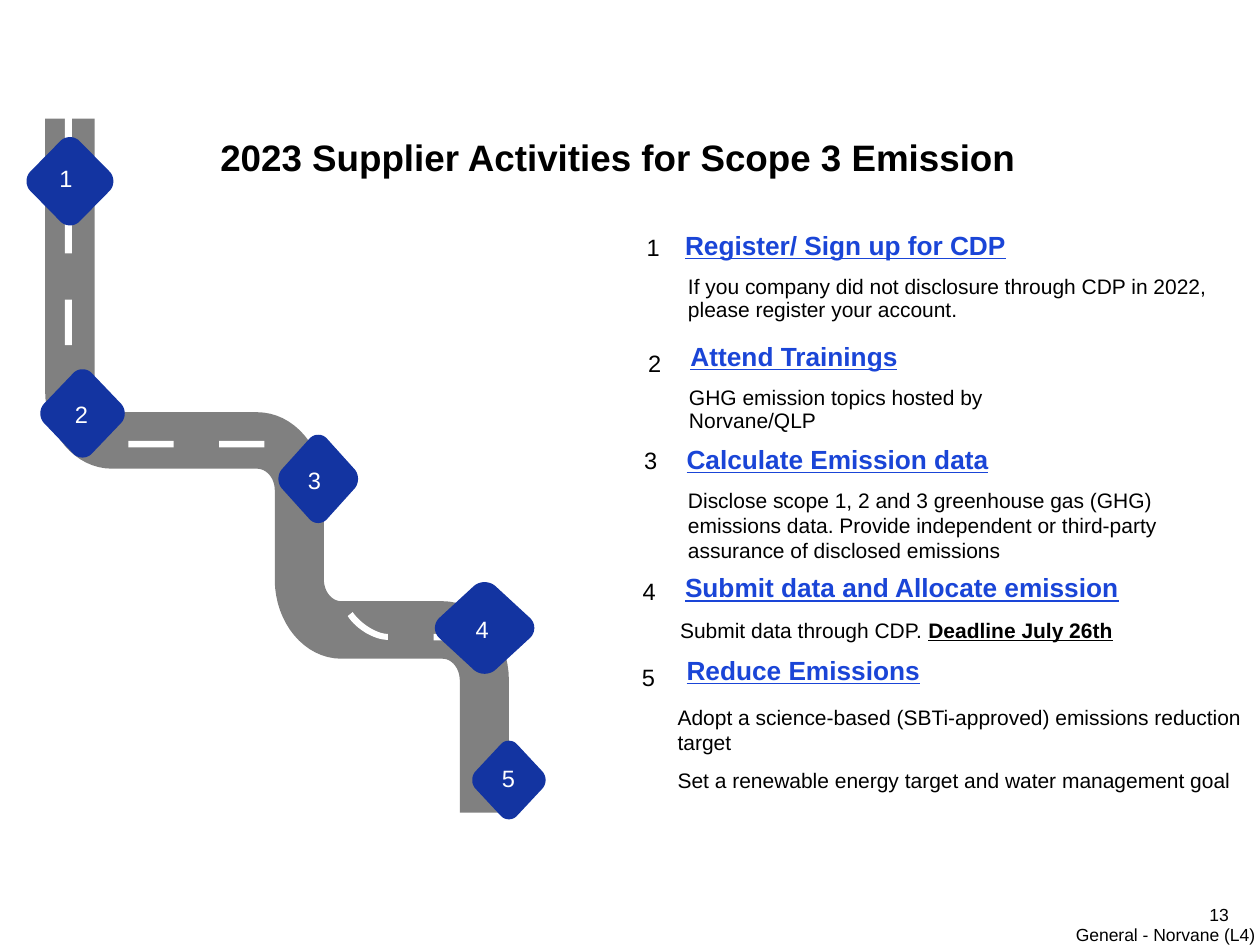
"""Build the supplier activities slide: a winding road beside five numbered steps."""
from dataclasses import dataclass

from pptx import Presentation
from pptx import util as u
from pptx.dml.color import RGBColor
from pptx.enum import text


@dataclass(frozen=True)
class Theme:
    """Colours, font and type sizes of the slide."""
    font: str = "Arial"
    ink: str = "000000"
    white: str = "FFFFFF"
    road: str = "808080"
    marker: str = "1334A1"
    link: str = "1A45D7"
    title: float = 21
    heading: float = 15
    number: float = 13.5
    body: float = 12
    footer: float = 10


@dataclass(frozen=True)
class Step:
    """One activity: its texts and, in centimetres, where its parts sit."""
    heading: str
    body: tuple
    label_at: tuple
    heading_box: tuple
    body_box: tuple
    marker_box: tuple
    marker_label_at: tuple
    leading: float = 0


T = Theme()
LABEL_SIZE = (0.94, 1.07)
TIGHT = (0.1, 0.05, 0.1, 0.05)
ROUNDNESS = 0.55

STEPS = [
    Step("Register/ Sign up for CDP",
         (("If you company did not disclosure through CDP in 2022, "
           "please register your account.",),),
         (12.7, 4.45), (13.56, 4.5, 7.04, 0.89), (13.77, 5.51, 10.9, 1.02),
         (0.51, 2.74, 1.8, 1.83), (0.86, 3.05), 13.1),
    Step("Attend Trainings",
         (("GHG emission topics hosted by Norvane/QLP",),),
         (12.73, 6.78), (13.67, 6.73, 4.72, 0.89), (13.79, 7.75, 8.13, 1.02),
         (0.79, 7.42, 1.75, 1.83), (1.17, 7.82), 13.1),
    Step("Calculate Emission data",
         (("Disclose scope 1, 2 and 3 greenhouse gas (GHG) emissions data. Provide "
           "independent or third-party assurance of disclosed emissions",),),
         (12.65, 8.74), (13.59, 8.81, 6.65, 0.89), (13.77, 9.78, 11.18, 2.26),
         (5.59, 8.74, 1.65, 1.83), (5.87, 9.14)),
    Step("Submit data and Allocate emission",
         (("Submit data through CDP. ", "Deadline July 26th"),),
         (12.62, 11.38), (13.56, 11.4, 9.47, 0.89), (13.61, 12.4, 10.41, 0.61),
         (8.74, 11.71, 2.06, 1.9), (9.25, 12.14)),
    Step("Reduce Emissions",
         (("Adopt a science-based (SBTi-approved) emissions reduction target",),
          ("Set a renewable energy target and water management goal",)),
         (12.6, 13.11), (13.59, 13.06, 5.26, 0.89), (13.56, 14.15, 11.73, 2.84),
         (9.5, 14.91, 1.52, 1.63), (9.78, 15.14)),
]

ROAD = [
    (10.26, 16.38), (9.27, 16.38), (9.27, 13.72), (9.27, 13.28, 8.92, 13.28),
    (6.88, 13.28), (5.54, 13.28, 5.54, 11.68), (5.54, 9.88), (5.54, 9.45, 5.18, 9.45),
    (2.26, 9.45), (0.91, 9.45, 0.91, 7.87), (0.91, 2.39), (1.91, 2.39),
    (1.91, 7.87), (1.91, 8.31, 2.26, 8.31), (5.18, 8.31), (6.53, 8.31, 6.53, 9.88),
    (6.53, 11.68), (6.53, 12.12, 6.88, 12.12), (8.92, 12.12), (10.26, 12.12, 10.26, 13.72),
]
BEND_DASH = [(7.82, 12.9), (7.32, 12.9, 7.01, 12.42), (7.11, 12.34), (7.42, 12.78, 7.82, 12.78)]


def bend(start, corner, end, n=16):
    """Return points along a rounded corner from start to end."""
    def at(t):
        pts = []
        for a, c, b in zip(start, corner, end):
            p, q = a + ROUNDNESS * (c - a), b + ROUNDNESS * (c - b)
            pts.append((1 - t) ** 3 * a + 3 * t * (1 - t) ** 2 * p
                       + 3 * t * t * (1 - t) * q + t ** 3 * b)
        return tuple(pts)
    return [at(i / n) for i in range(1, n + 1)]


def outline(steps):
    """Turn line ends (x, y) and bends (corner x, y, end x, y) into points."""
    pts = [steps[0]]
    for step in steps[1:]:
        pts += [step] if len(step) == 2 else bend(pts[-1], step[:2], step[2:])
    return pts


def rectangle(x, y, w, h):
    """Return the corners of a rectangle."""
    return [(x, y), (x + w, y), (x + w, y + h), (x, y + h)]


def diamond(x, y, w, h):
    """Return the points of a diamond with rounded tips that fills a box."""
    tip = [(-0.105, -0.445)] + bend((-0.105, -0.445), (0, -0.545), (0.105, -0.445))
    pts = []
    for _ in range(4):
        pts += tip
        tip = [(-b, a) for a, b in tip]
    return [(x + w * (0.5 + a), y + h * (0.5 + b)) for a, b in pts]


def add_outline(s, contours, color):
    """Add one filled freeform made of closed contours."""
    paths = [[(u.Cm(x), u.Cm(y)) for x, y in c] for c in contours]
    fb = s.shapes.build_freeform(*paths[0][0])
    for i, pts in enumerate(paths):
        if i:
            fb.move_to(*pts[0])
        fb.add_line_segments(pts[1:], close=True)
    sp = fb.convert_to_shape()
    sp.shadow.inherit = False
    sp.fill.solid()
    sp.fill.fore_color.rgb = RGBColor.from_string(color)
    sp.line.fill.background()


def style(r, size, color=T.ink, bold=False, underline=False):
    """Format one run."""
    r.font.name, r.font.size = T.font, u.Pt(size)
    r.font.bold, r.font.underline = bold, underline
    r.font.color.rgb = RGBColor.from_string(color)


def add_text(s, box, content, size, color=T.ink, align=text.PP_ALIGN.LEFT,
             anchor=text.MSO_ANCHOR.TOP, insets=(0, 0, 0, 0), **marks):
    """Add a text box holding one styled paragraph."""
    tf = s.shapes.add_textbox(*map(u.Cm, box)).text_frame
    tf.word_wrap, tf.vertical_anchor = True, anchor
    tf.margin_left, tf.margin_top, tf.margin_right, tf.margin_bottom = map(u.Cm, insets)
    p = tf.paragraphs[0]
    p.text, p.alignment = content, align
    for r in p.runs:
        style(r, size, color, **marks)
    return tf


def add_number(s, at, n, color):
    """Add a step number centred in its box."""
    add_text(s, at + LABEL_SIZE, str(n), T.number, color,
             text.PP_ALIGN.CENTER, text.MSO_ANCHOR.MIDDLE)


def add_body(s, step):
    """Add a step's description, with any second run emphasised."""
    tf = add_text(s, step.body_box, "", T.body, insets=TIGHT)
    for i, runs in enumerate(step.body):
        p = tf.add_paragraph() if i else tf.paragraphs[0]
        p.space_after = u.Pt(7.5)
        if step.leading:
            p.line_spacing = u.Pt(step.leading)
        for j, content in enumerate(runs):
            r = p.add_run()
            r.text = content
            style(r, T.body, bold=j > 0, underline=j > 0)


def set_title(s, content):
    """Place and format the title placeholder."""
    sp = s.shapes.title
    sp.left, sp.top, sp.width, sp.height = map(u.Cm, (4.11, 2.59, 16.69, 1.14))
    tf = sp.text_frame
    tf.text, tf.word_wrap, tf.auto_size = content, False, text.MSO_AUTO_SIZE.NONE
    tf.paragraphs[0].alignment = text.PP_ALIGN.CENTER
    style(tf.paragraphs[0].runs[0], T.title, bold=True)


def add_road(s):
    """Add the road and its lane dashes."""
    down = [rectangle(1.31, 2.34 + 1.85 * i, 0.14, 0.92) for i in range(3)]
    across = [rectangle(x, y, 0.91, 0.13) for x, y in ((2.59, 8.89), (4.42, 8.89), (8.74, 12.78))]
    add_outline(s, [outline(ROAD)], T.road)
    add_outline(s, down + across + [outline(BEND_DASH)], T.white)


def main():
    """Build and save the slide."""
    prs = Presentation()
    prs.slide_width, prs.slide_height = u.Cm(25.4), u.Cm(19.05)
    s = prs.slides.add_slide(prs.slide_layouts[5])
    set_title(s, "2023 Supplier Activities for Scope 3 Emission")
    add_road(s)
    for n, step in enumerate(STEPS, 1):
        add_outline(s, [diamond(*step.marker_box)], T.marker)
        add_number(s, step.marker_label_at, n, T.white)
        add_number(s, step.label_at, n, T.ink)
        add_text(s, step.heading_box, step.heading, T.heading, T.link,
                 anchor=text.MSO_ANCHOR.BOTTOM, insets=(0.25, 0.13, 0, 0.13),
                 bold=True, underline=True)
        add_body(s, step)
    add_text(s, (23.5, 18.19, 1.27, 0.51), "13", T.footer, align=text.PP_ALIGN.RIGHT,
             anchor=text.MSO_ANCHOR.MIDDLE)
    add_text(s, (21.1, 18.62, 4.2, 0.43), "General - Norvane (L4)", T.footer,
             align=text.PP_ALIGN.RIGHT)
    prs.save("out.pptx")


if __name__ == "__main__":
    main()
